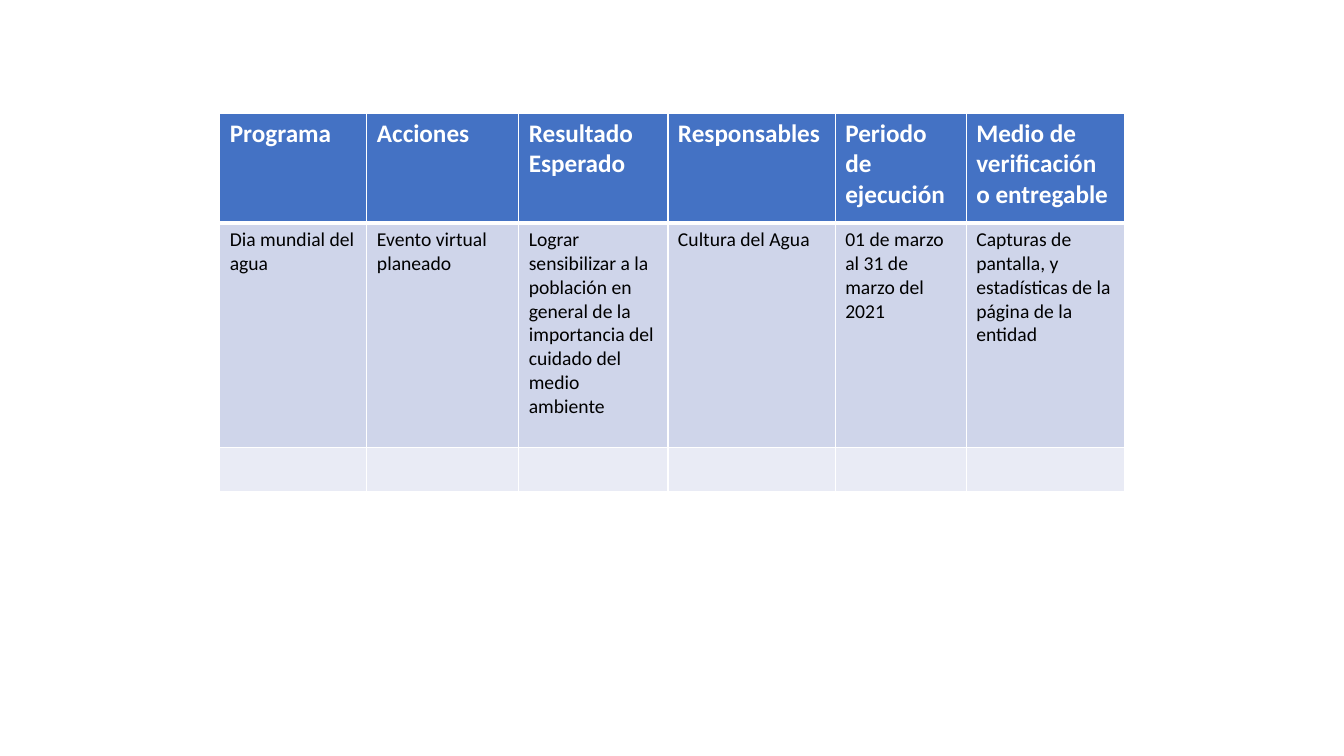
from dataclasses import dataclass

from lxml import etree
from pptx import Presentation, util as u
from pptx.dml import color
from pptx.oxml import ns


@dataclass(frozen=True)
class Theme:
    font: str = "Calibri"
    header_fill: str = "4472C4"
    header_text: str = "FFFFFF"
    body_text: str = "000000"
    border: str = "FFFFFF"
    header_size: int = 18
    body_size: int = 14
    thin: int = 1
    thick: int = 3


@dataclass(frozen=True)
class Column:
    width: float  # percent of the slide's width
    header: str
    entry: str


@dataclass(frozen=True)
class Row:
    height: float  # percent of the slide's height
    texts: list[str]
    fill: str
    text_color: str
    size: int
    bold: bool = False
    top: int = 1
    bottom: int = 1


THEME = Theme()
PAGE_WIDTH, PAGE_HEIGHT = u.Inches(13.333), u.Inches(7.5)
LEFT, TOP = 16.35, 14.95

COLUMNS = [
    Column(10.95, "Programa", "Dia mundial del agua"),
    Column(11.3, "Acciones", "Evento virtual planeado"),
    Column(11.1, "Resultado Esperado",
           "Lograr sensibilizar a la población en general de la "
           "importancia del cuidado del medio ambiente"),
    Column(12.45, "Responsables", "Cultura del Agua"),
    Column(9.75, "Periodo de ejecución", "01 de marzo al 31 de marzo del 2021"),
    Column(11.8, "Medio de verificación o entregable",
           "Capturas de pantalla, y estadísticas de la página de la entidad"),
]
ROWS = [
    Row(14.53, [column.header for column in COLUMNS], THEME.header_fill,
        THEME.header_text, THEME.header_size, bold=True, bottom=THEME.thick),
    Row(29.67, [column.entry for column in COLUMNS], "CFD5EA",
        THEME.body_text, THEME.body_size, top=THEME.thick),
    Row(5.85, [""] * len(COLUMNS), "E9EBF5", THEME.body_text, THEME.body_size),
]


def across(percent: float) -> int:
    return round(PAGE_WIDTH * percent / 100)


def down(percent: float) -> int:
    return round(PAGE_HEIGHT * percent / 100)


def add_borders(cell, top: int, bottom: int) -> None:
    """Must run before the cell is filled, as borders precede the fill in XML."""
    properties = cell._tc.get_or_add_tcPr()
    widths = {"L": THEME.thin, "R": THEME.thin, "T": top, "B": bottom}
    for side, points in widths.items():
        line = etree.SubElement(properties, ns.qn(f"a:ln{side}"), w=str(u.Pt(points)))
        fill = etree.SubElement(line, ns.qn("a:solidFill"))
        etree.SubElement(fill, ns.qn("a:srgbClr"), val=THEME.border)


def write(cell, content: str, *, size: int, text_color: str, bold: bool) -> None:
    span = cell.text_frame.paragraphs[0].add_run()
    span.text = content
    span.font.name = THEME.font
    span.font.size = u.Pt(size)
    span.font.bold = bold
    span.font.color.rgb = color.RGBColor.from_string(text_color)


def add_program_table(page) -> None:
    width = across(sum(column.width for column in COLUMNS))
    height = down(sum(row.height for row in ROWS))
    table = page.shapes.add_table(len(ROWS), len(COLUMNS), across(LEFT), down(TOP),
                                  width, height).table
    for index, column in enumerate(COLUMNS):
        table.columns[index].width = across(column.width)
    for index, row in enumerate(ROWS):
        table.rows[index].height = down(row.height)
        for cell, content in zip(table.rows[index].cells, row.texts):
            add_borders(cell, row.top, row.bottom)
            cell.fill.solid()
            cell.fill.fore_color.rgb = color.RGBColor.from_string(row.fill)
            if content:
                write(cell, content, size=row.size, text_color=row.text_color,
                      bold=row.bold)


def main() -> None:
    deck = Presentation()
    deck.slide_width, deck.slide_height = PAGE_WIDTH, PAGE_HEIGHT
    page = deck.slides.add_slide(deck.slide_layouts.get_by_name("Blank"))
    add_program_table(page)
    deck.save("out.pptx")


if __name__ == "__main__":
    main()
